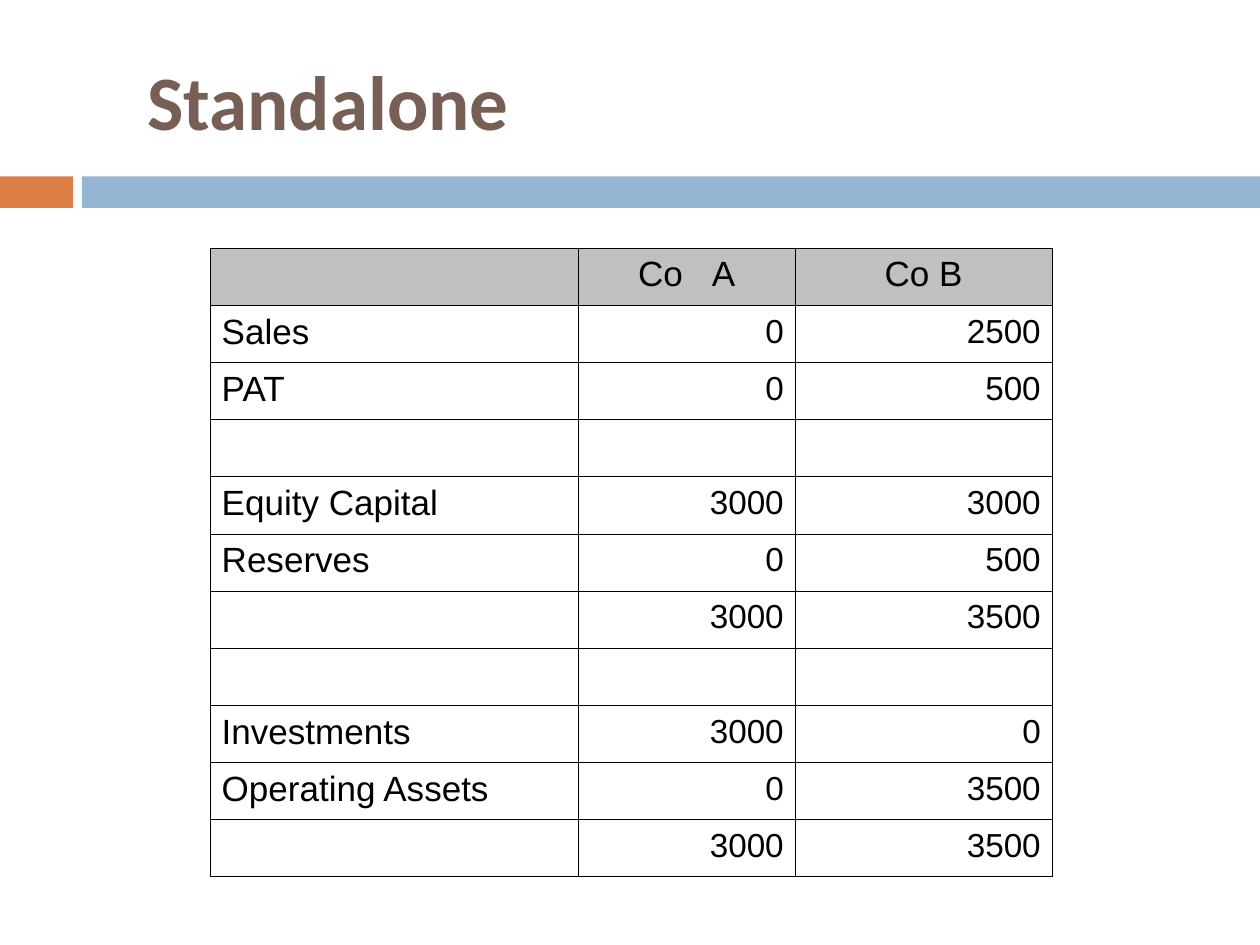
from dataclasses import dataclass

from lxml.etree import SubElement
from pptx import Presentation
from pptx.dml.color import RGBColor
from pptx.enum.shapes import MSO_SHAPE as Shape
from pptx.enum.text import MSO_ANCHOR as Anchor, PP_ALIGN as Align
from pptx.oxml.ns import qn
from pptx.util import Inches, Pt


@dataclass(frozen=True)
class Theme:
    title_font: str = "Calibri"
    body_font: str = "Arial"
    title_size: int = 44
    label_size: int = 20
    number_size: int = 19
    title: str = "775F55"
    accent: str = "DD8047"
    band: str = "94B6D2"
    header: str = "C0C0C0"
    ink: str = "000000"


@dataclass(frozen=True)
class Box:
    left: float
    top: float
    width: float
    height: float

    def place(self):
        return [Inches(n) for n in (self.left, self.top, self.width, self.height)]


THEME = Theme()
COLUMNS = (2.92, 1.72, 2.04)
BORDER_WIDTH = 0.57
WORD_GAP = 11  # extra points after the space in a spaced-out heading
ROWS = [
    ("", "Co A", "Co B"),
    ("Sales", "0", "2500"),
    ("PAT", "0", "500"),
    ("", "", ""),
    ("Equity Capital", "3000", "3000"),
    ("Reserves", "0", "500"),
    ("", "3000", "3500"),
    ("", "", ""),
    ("Investments", "3000", "0"),
    ("Operating Assets", "0", "3500"),
    ("", "3000", "3500"),
]


def style_run(span, font, size, color, bold=False):
    span.font.name, span.font.size, span.font.bold = font, Pt(size), bold
    span.font.color.rgb = RGBColor.from_string(color)


def add_title(page, box, text):
    frame = page.shapes.add_textbox(*box.place()).text_frame
    frame.word_wrap = True
    frame.vertical_anchor = Anchor.MIDDLE
    frame.margin_left = Inches(0.5)
    frame.text = text
    style_run(frame.paragraphs[0].runs[0], THEME.title_font, THEME.title_size,
              THEME.title, bold=True)


def add_band(page, box):
    # Short accent block, a white gap, then the long bar
    block, gap = 0.58, 0.07
    bar_left = block + gap
    parts = ((0, block, THEME.accent),
             (bar_left, box.width - bar_left, THEME.band))
    for offset, width, color in parts:
        part = Box(box.left + offset, box.top, width, box.height)
        bar = page.shapes.add_shape(Shape.RECTANGLE, *part.place())
        bar.shadow.inherit = False
        bar.fill.solid()
        bar.fill.fore_color.rgb = RGBColor.from_string(color)
        bar.line.fill.background()


def set_borders(cell):
    properties = cell._tc.get_or_add_tcPr()
    for index, side in enumerate(("lnL", "lnR", "lnT", "lnB")):
        line = properties.makeelement(qn(f"a:{side}"), {"w": str(Pt(BORDER_WIDTH))})
        fill = SubElement(line, qn("a:solidFill"))
        SubElement(fill, qn("a:srgbClr"), val=THEME.ink)
        properties.insert(index, line)


def fill_cell(cell, text, align, size, top_margin):
    cell.vertical_anchor = Anchor.MIDDLE
    cell.margin_left = cell.margin_right = Inches(0.09)
    cell.margin_top, cell.margin_bottom = Inches(top_margin), Inches(0.05)
    para = cell.text_frame.paragraphs[0]
    para.text = text
    para.alignment = align
    para.line_spacing, para.space_after = 0.76, Pt(14.2)
    for span in para.runs:
        style_run(span, THEME.body_font, size, THEME.ink)


def widen_space(cell):
    # Give the space between the two words its own, wider tracking
    para = cell.text_frame.paragraphs[0]
    first, last = para.text.split(" ")
    para.runs[0].text = first
    for text in (" ", last):
        span = para.add_run()
        span.text = text
        style_run(span, THEME.body_font, THEME.label_size, THEME.ink)
    para.runs[1].font._element.set("spc", str(WORD_GAP * 100))


def add_accounts(page, box):
    frame = page.shapes.add_table(len(ROWS), len(COLUMNS), *box.place())
    table = frame.table
    table.horz_banding = False
    for column, width in zip(table.columns, COLUMNS):
        column.width = Inches(width)
    for row in table.rows:
        row.height = Inches(box.height / len(ROWS))

    for r, values in enumerate(ROWS):
        for c, text in enumerate(values):
            cell = table.cell(r, c)
            if r == 0:
                cell.fill.solid()
                cell.fill.fore_color.rgb = RGBColor.from_string(THEME.header)
            else:
                cell.fill.background()
            set_borders(cell)
            if not text:
                continue
            if r == 0:
                fill_cell(cell, text, Align.CENTER, THEME.label_size, 0.07)
            elif c == 0:
                fill_cell(cell, text, Align.LEFT, THEME.label_size, 0.07)
            else:
                fill_cell(cell, text, Align.RIGHT, THEME.number_size, 0.06)
    widen_space(table.cell(0, 1))


def main():
    deck = Presentation()
    deck.slide_width, deck.slide_height = Inches(10), Inches(7.5)
    page = deck.slides.add_slide(deck.slide_layouts[6])
    add_band(page, Box(0, 1.4, 10, 0.25))
    add_title(page, Box(0.67, 0.25, 8.92, 1.08), "Standalone")
    add_accounts(page, Box(1.67, 1.97, sum(COLUMNS), 4.99))
    deck.save("out.pptx")


if __name__ == "__main__":
    main()
